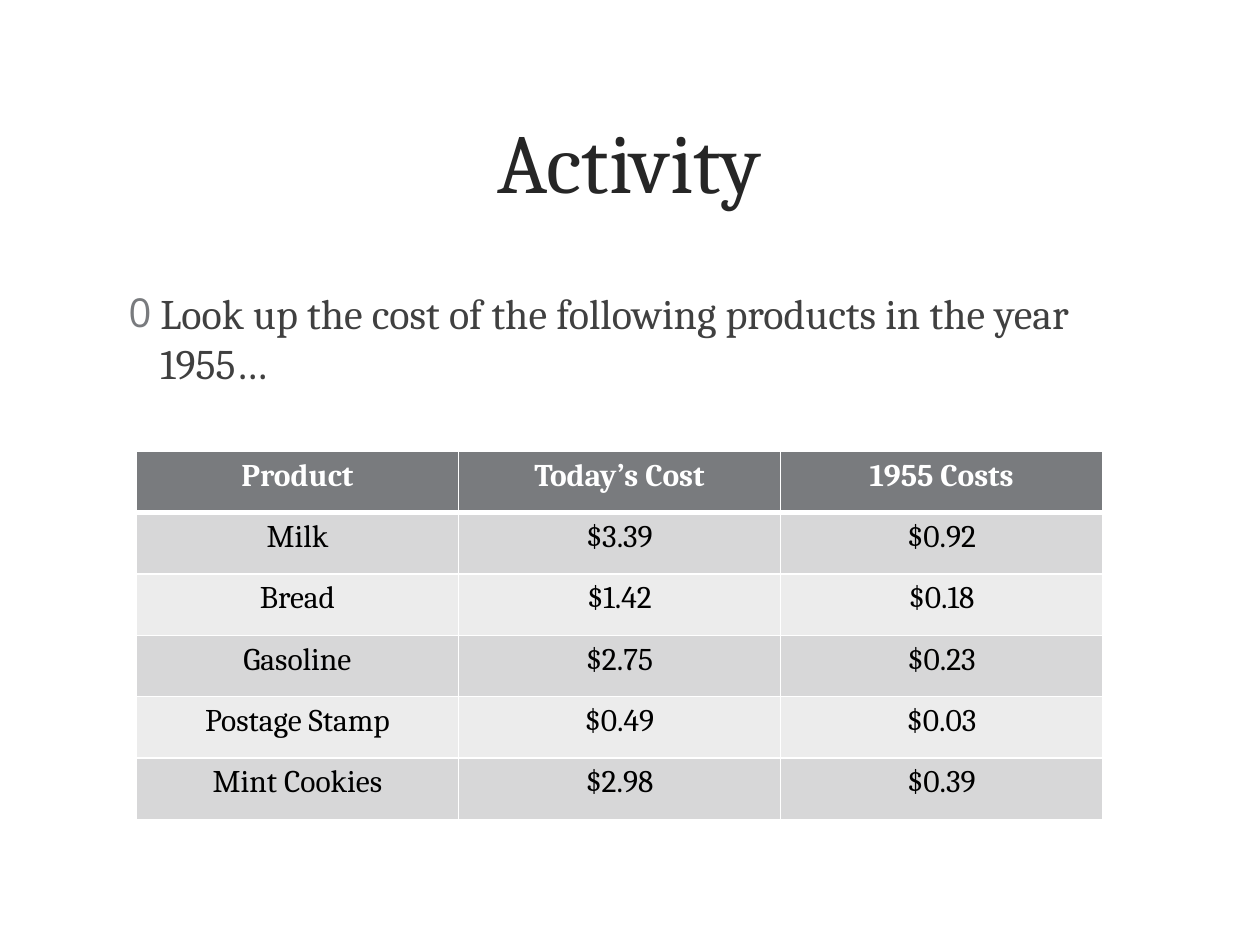
from lxml import etree
from pptx import Presentation
from pptx.dml.color import RGBColor
from pptx.enum.text import MSO_ANCHOR, PP_ALIGN
from pptx.oxml.ns import qn
from pptx.util import Cm, Pt

CENTER, LEFT = PP_ALIGN.CENTER, PP_ALIGN.LEFT
MIDDLE, TOP = MSO_ANCHOR.MIDDLE, MSO_ANCHOR.TOP
FONT = "Cambria"
GRAY, WHITE = "797B7E", "FFFFFF"
BANDS = ("D7D7D8", "ECECEC")

TITLE = "Activity"
TASK = "Look up the cost of the following products in the year 1955…"
COSTS = [
    ("Product", "Today’s Cost", "1955 Costs"),
    ("Milk", "$3.39", "$0.92"),
    ("Bread", "$1.42", "$0.18"),
    ("Gasoline", "$2.75", "$0.23"),
    ("Postage Stamp", "$0.49", "$0.03"),
    ("Mint Cookies", "$2.98", "$0.39"),
]


def color(value):
    return RGBColor.from_string(value)


def write(frame, text, size, ink, align=CENTER, bold=False, bullet=None):
    para = frame.paragraphs[0]
    para.alignment = align
    para.space_before = Pt(0)
    if bullet:
        add_bullet(para, bullet)
    span = para.add_run()
    span.text = text
    span.font.name = FONT
    span.font.size = Pt(size)
    span.font.bold = bold
    span.font.color.rgb = color(ink)


def add_bullet(para, mark):
    props = para._p.get_or_add_pPr()
    indent = Cm(0.64)
    props.set("marL", str(indent))
    props.set("indent", str(-indent))
    tint = etree.SubElement(props, qn("a:buClr"))
    etree.SubElement(tint, qn("a:srgbClr"), val=GRAY)
    etree.SubElement(props, qn("a:buSzPct"), val="95000")
    etree.SubElement(props, qn("a:buFont"), typeface="Open Sans")
    etree.SubElement(props, qn("a:buChar"), char=mark)


def add_borders(cell, **widths):
    """Draw white cell borders; widths are points by side: L, R, T, B."""
    props = cell._tc.get_or_add_tcPr()
    for side, width in widths.items():
        line = etree.SubElement(props, qn(f"a:ln{side}"), w=str(Pt(width)))
        fill = etree.SubElement(line, qn("a:solidFill"))
        etree.SubElement(fill, qn("a:srgbClr"), val=WHITE)


def place(box, left, top, width, height, anchor):
    box.left, box.top = Cm(left), Cm(top)
    box.width, box.height = Cm(width), Cm(height)
    box.text_frame.word_wrap = True
    box.text_frame.vertical_anchor = anchor


def add_cost_table(page, left, top, width, height):
    table = page.shapes.add_table(
        len(COSTS), len(COSTS[0]), Cm(left), Cm(top), Cm(width), Cm(height)
    ).table
    for r, values in enumerate(COSTS):
        header = r == 0
        for c, value in enumerate(values):
            cell = table.cell(r, c)
            add_borders(cell, L=1, R=1, T=3 if r == 1 else 1, B=3 if header else 1)
            cell.fill.solid()
            cell.fill.fore_color.rgb = color(GRAY if header else BANDS[(r - 1) % 2])
            write(cell.text_frame, value, 18, WHITE if header else "000000", bold=header)


def main():
    deck = Presentation()
    deck.slide_width, deck.slide_height = Cm(25.4), Cm(19.05)
    page = deck.slides.add_slide(deck.slide_layouts[1])
    title, body = page.shapes.title, page.placeholders[1]

    place(title, 1.52, 1.22, 22.33, 4.01, MIDDLE)
    write(title.text_frame, TITLE, 48, "262626")
    place(body, 2.34, 5.66, 20.75, 10.97, TOP)
    write(body.text_frame, TASK, 24, "404040", align=LEFT, bullet="0")
    add_cost_table(page, 2.75, 9.1, 19.48, 7.42)
    deck.save("out.pptx")


if __name__ == "__main__":
    main()
